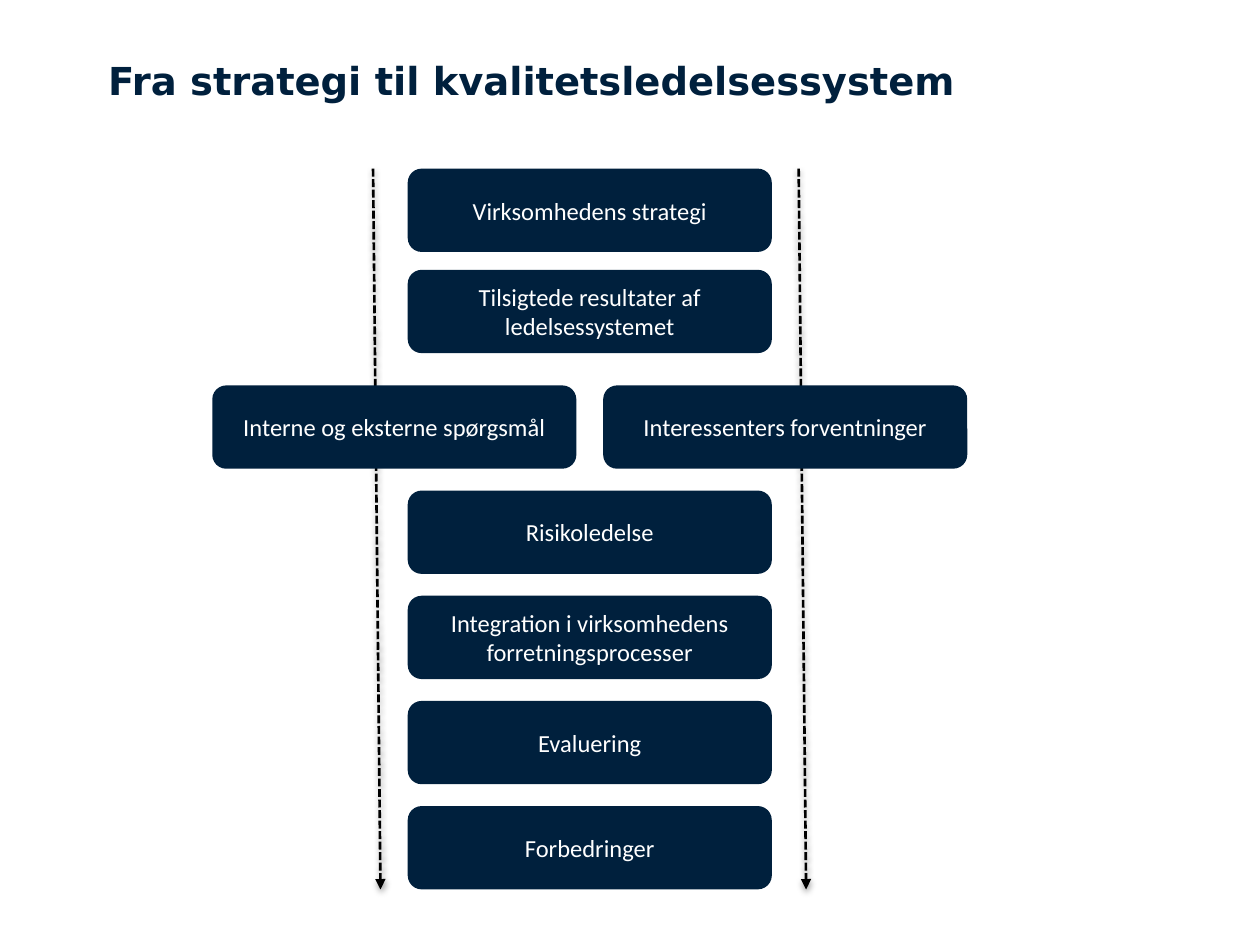
from lxml import etree
from pptx import Presentation
from pptx.dml.color import RGBColor
from pptx.enum.dml import MSO_LINE
from pptx.enum.shapes import MSO_CONNECTOR, MSO_SHAPE
from pptx.enum.text import MSO_ANCHOR, MSO_AUTO_SIZE, PP_ALIGN
from pptx.oxml import parse_xml
from pptx.oxml.ns import nsdecls, qn
from pptx.util import Cm, Pt

NAVY, WHITE, BLACK = "00203D", "FFFFFF", "000000"
BOX_W, BOX_H = 7.34, 1.68
PAIR_STEP = 7.88

SHADOW = f"""<a:effectLst {nsdecls("a")}>
  <a:outerShdw blurRad="40000" dist="20000" dir="5400000" rotWithShape="0">
    <a:srgbClr val="{BLACK}"><a:alpha val="38000"/></a:srgbClr>
  </a:outerShdw>
</a:effectLst>"""


def color(value):
    return RGBColor.from_string(value)


def set_font(p, name, size, value, bold=False):
    p.font.name, p.font.size, p.font.bold = name, Pt(size), bold
    p.font.color.rgb = color(value)


def add_title(slide, text, x, y, w, h):
    s = slide.shapes.title
    s.left, s.top, s.width, s.height = Cm(x), Cm(y), Cm(w), Cm(h)
    tf = s.text_frame
    tf.margin_left = tf.margin_top = tf.margin_right = tf.margin_bottom = 0
    tf.vertical_anchor = MSO_ANCHOR.TOP
    tf.auto_size = MSO_AUTO_SIZE.NONE
    tf.text = text
    p = tf.paragraphs[0]
    p.alignment = PP_ALIGN.LEFT
    set_font(p, "DejaVu Sans", 22, NAVY, bold=True)


def add_step(slide, text, x, y):
    s = slide.shapes.add_shape(
        MSO_SHAPE.ROUNDED_RECTANGLE, Cm(x), Cm(y), Cm(BOX_W), Cm(BOX_H))
    s.shadow.inherit = False
    s.fill.solid()
    s.fill.fore_color.rgb = color(NAVY)
    s.line.fill.background()
    tf = s.text_frame
    tf.word_wrap = True
    tf.vertical_anchor = MSO_ANCHOR.MIDDLE
    tf.text = text
    p = tf.paragraphs[0]
    p.alignment = PP_ALIGN.CENTER
    set_font(p, "Calibri", 14, WHITE)


def add_arrow(slide, x, y, dx, dy):
    """Draw a dashed, shadowed arrow pointing down the flow."""
    s = slide.shapes.add_connector(
        MSO_CONNECTOR.STRAIGHT, Cm(x), Cm(y), Cm(x + dx), Cm(y + dy))
    s.line.color.rgb = color(BLACK)
    s.line.width = Pt(1.5)
    s.line.dash_style = MSO_LINE.SQUARE_DOT
    etree.SubElement(s.line._get_or_add_ln(), qn("a:tailEnd"), type="triangle")
    s._element.spPr.append(parse_xml(SHADOW))


def add_column(slide, texts, x, y, step):
    for i, text in enumerate(texts):
        add_step(slide, text, x, y + i * step)


def add_flow(slide, x, y, w, h):
    """Place the steps in a centred column, split in two at the third row."""
    center = x + (w - BOX_W) / 2
    for arrow_x in (x + 3.24, x + 11.82):
        add_arrow(slide, arrow_x, y, 0.15, h)
    add_column(slide, ["Virksomhedens strategi",
                       "Tilsigtede resultater af ledelsessystemet"],
               center, y, 2.04)
    for i, text in enumerate(["Interne og eksterne spørgsmål",
                              "Interessenters forventninger"]):
        add_step(slide, text, x + i * PAIR_STEP, y + 4.37)
    step = 2.12
    lower = ["Risikoledelse",
             "Integration i virksomhedens forretningsprocesser",
             "Evaluering",
             "Forbedringer"]
    top = y + h - BOX_H - (len(lower) - 1) * step
    add_column(slide, lower, center, top, step)


def main():
    prs = Presentation()
    prs.slide_width, prs.slide_height = Cm(25.4), Cm(19.05)
    slide = prs.slides.add_slide(prs.slide_layouts[5])
    add_title(slide, "Fra strategi til kvalitetsledelsessystem",
              2.18, 1.14, 21.51, 2.06)
    add_flow(slide, 4.28, 3.4, PAIR_STEP + BOX_W, 14.53)
    prs.save("out.pptx")


if __name__ == "__main__":
    main()
